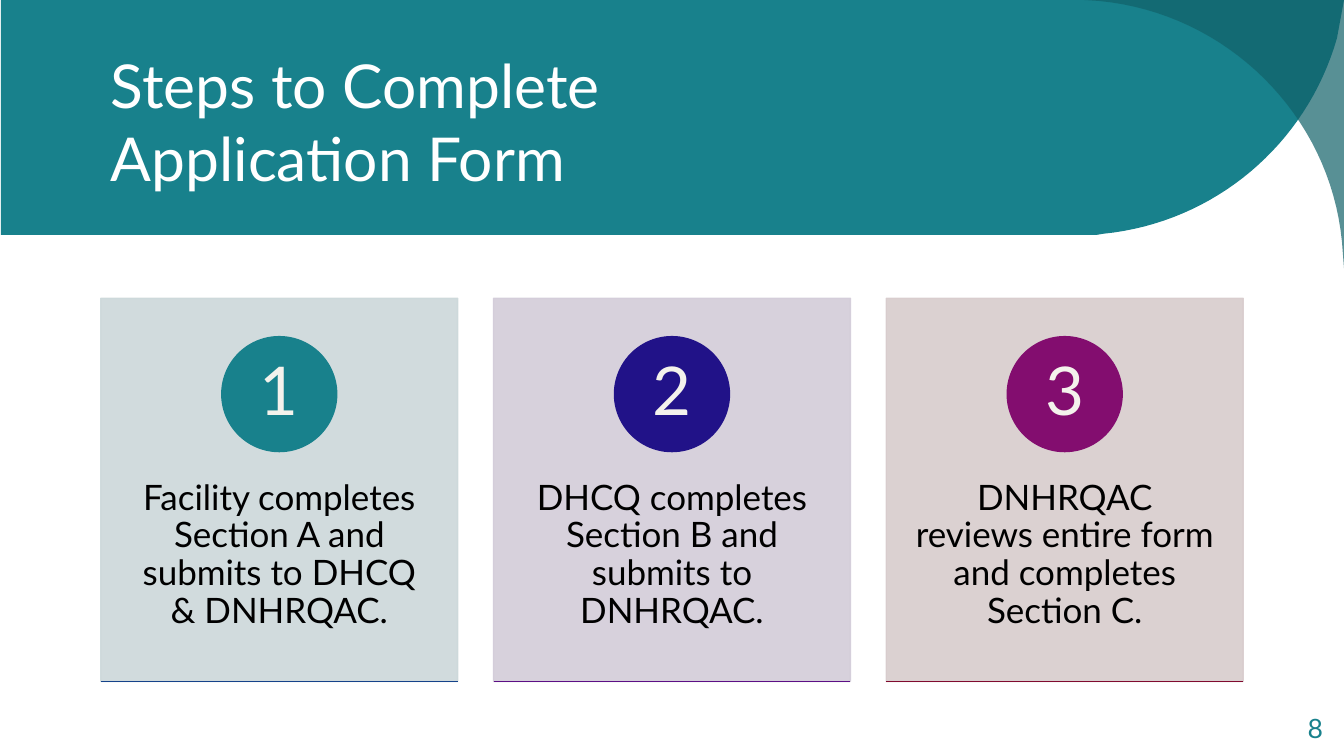
from lxml.etree import SubElement
from pptx import Presentation
from pptx.dml.color import RGBColor
from pptx.enum.shapes import MSO_CONNECTOR, MSO_SHAPE
from pptx.enum.text import MSO_ANCHOR, PP_ALIGN
from pptx.oxml.ns import qn
from pptx.util import Inches, Pt

TEAL = "18818C"
STEPS = [
    ("1", "Facility completes Section A and submits to DHCQ & DNHRQAC.",
     "CCD8DA", TEAL, "15428A"),
    ("2", "DHCQ completes Section B and submits to DNHRQAC.",
     "D3CCD9", "211288", "5C0F85"),
    ("3", "DNHRQAC reviews entire form and completes\nSection C.",
     "D8CCCD", "830D6F", "800A2F"),
]


def color(code):
    return RGBColor.from_string(code)


def paint(fill, code, alpha=100):
    fill.solid()
    fill.fore_color.rgb = color(code)
    if alpha < 100:
        tone = fill._xPr.find(qn("a:solidFill"))[0]
        SubElement(tone, qn("a:alpha"), val=str(alpha * 1000))


def write(shape, text, size, code, align=PP_ALIGN.CENTER, space=0.9,
          inset=(0.1, 0.05), anchor=MSO_ANCHOR.MIDDLE):
    frame = shape.text_frame
    frame.word_wrap = True
    frame.vertical_anchor = anchor
    frame.margin_left = frame.margin_right = Inches(inset[0])
    frame.margin_top = frame.margin_bottom = Inches(inset[1])
    frame.text = text
    for para in frame.paragraphs:
        para.alignment = align
        para.line_spacing = space
        para.font.name = "Lato"
        para.font.size = Pt(size)
        para.font.color.rgb = color(code)


def label(slide, box, *args, **style):
    write(slide.shapes.add_textbox(*map(Inches, box)), *args, **style)


def solid(slide, kind, box, code, alpha=100):
    shape = slide.shapes.add_shape(kind, *map(Inches, box))
    shape.shadow.inherit = False
    paint(shape.fill, code, alpha)
    paint(shape.line.fill, code, alpha)
    shape.line.width = Pt(1)
    return shape


def curve(a, b, c, d, steps=32):
    points = []
    for i in range(steps + 1):
        t = i / steps
        u = 1 - t
        points.append(tuple(
            u**3 * p + 3 * u * u * t * q + 3 * u * t * t * r + t**3 * s
            for p, q, r, s in zip(a, b, c, d)))
    return points


def outline(slide, box, points, code, alpha=100):
    left, top = box[:2]
    spots = [(Inches(left + x), Inches(top + y)) for x, y in points]
    path = slide.shapes.build_freeform(*spots[0])
    path.add_line_segments(spots[1:])
    shape = path.convert_to_shape()
    shape.shadow.inherit = False
    paint(shape.fill, code, alpha)
    shape.line.fill.background()


def header(slide, box):
    left, top, width, height = box
    bend = curve((10.93, 2.32), (12.04, 2.21), (12.95, 1.43), (13.25, 0.38))
    outline(slide, box, [(0, 0), (0, height), (10.87, height), *bend,
                         (width, 0)], TEAL)
    sweep = curve((2.56, 2.4), (2.44, 1.14), (1.42, 0.13), (0.15, 0.01))
    outline(slide, (left + 10.74, top), [(0, 0), (2.58, 0), (2.58, 2.66),
                                         *sweep], "126169", 70)
    label(slide, (left + 0.99, top + 0.49, 10.84, 1.42),
          "Steps to Complete\nApplication Form", 43.2, "FFFFFF",
          align=PP_ALIGN.LEFT, space=1)


def card(slide, box, step):
    left, top, width, height = box
    number, text, back, disc, rule = step
    solid(slide, MSO_SHAPE.RECTANGLE, box, back, 90)
    label(slide, (left, top + 1.44, width, 2.28), text, 25, "000000",
          inset=(0.28, 0.36), anchor=MSO_ANCHOR.TOP)
    size = 1.14
    badge = solid(slide, MSO_SHAPE.OVAL,
                  (left + (width - size) / 2, top + 0.38, size, size), disc)
    write(badge, number, 48, "F4F2EC", inset=(0.09, 0.01))
    base = top + height
    line = slide.shapes.add_connector(
        MSO_CONNECTOR.STRAIGHT,
        *map(Inches, (left, base, left + width, base)))
    paint(line.line.fill, rule)
    line.line.width = Pt(1)
    SubElement(line._element.spPr, qn("a:effectLst"))


def cards(slide, box):
    left, top, width, height = box
    wide = 3.54
    pitch = (width - wide) / (len(STEPS) - 1)
    for i, step in enumerate(STEPS):
        card(slide, (left + i * pitch, top, wide, height), step)


def main():
    deck = Presentation()
    deck.slide_width = Inches(13.33)
    deck.slide_height = Inches(7.5)
    slide = deck.slides.add_slide(deck.slide_layouts[6])
    header(slide, (0.01, 0, 13.32, 2.33))
    label(slide, (12.46, 7.04, 0.76, 0.4), "8", 19, TEAL,
          align=PP_ALIGN.RIGHT)
    cards(slide, (1, 2.96, 11.33, 3.8))
    deck.save("out.pptx")


if __name__ == "__main__":
    main()
